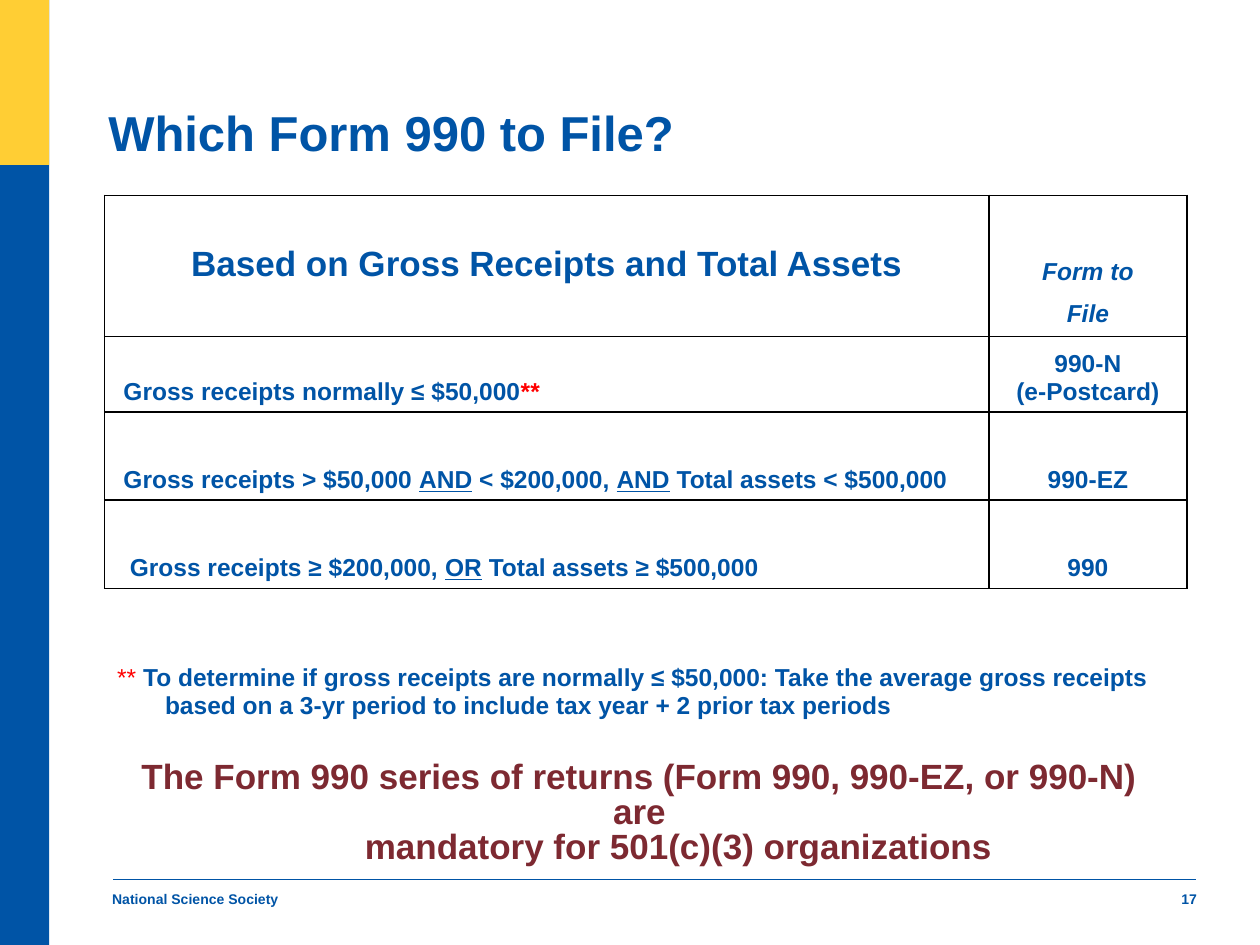
"""Build the slide that shows which Form 990 to file."""
from dataclasses import dataclass

from lxml import etree
from pptx import Presentation
from pptx import util as u
from pptx.dml.color import RGBColor
from pptx.enum import shapes, text
from pptx.oxml import ns

Inches, Pt = u.Inches, u.Pt
LEFT, CENTER, RIGHT = text.PP_ALIGN.LEFT, text.PP_ALIGN.CENTER, text.PP_ALIGN.RIGHT
TOP, MIDDLE, BOTTOM = text.MSO_ANCHOR.TOP, text.MSO_ANCHOR.MIDDLE, text.MSO_ANCHOR.BOTTOM


@dataclass(frozen=True)
class Theme:
    """Colours, font and type sizes of the slide."""
    blue: str = "0054A6"
    yellow: str = "FFCE34"
    red: str = "FF0000"
    maroon: str = "7D2931"
    black: str = "000000"
    font: str = "Arial"
    title: int = 28
    heading: int = 20
    body: int = 14
    footer: int = 8


THEME = Theme()
COLUMNS = [7.02, 1.57]
ROWS = [0.77, 0.35, 0.6, 0.35, 0.35, 0.35, 0.35, 1.09, 1.17]
LAST_RULED_ROW = 6
CLOSING_ROWS = {1, 2, 4, 6}
MERGES = [((5, 1), (6, 1)), ((7, 0), (7, 1)), ((8, 0), (8, 1))]
UNDERLINED = {"underline": True}
FORM = {"align": CENTER}
CRITERION = {"left": 0.15}

CELLS = {
    (0, 0): ([["Based on Gross Receipts and Total Assets"]],
             {"anchor": MIDDLE, "align": CENTER, "top": 0.38, "size": THEME.heading}),
    (0, 1): ([["Form to"]], {"align": CENTER, "italic": True}),
    (1, 1): ([["File"]], {"anchor": MIDDLE, "align": CENTER, "italic": True}),
    (2, 0): ([["Gross receipts normally ≤ $50,000", ("**", {"color": THEME.red})]], CRITERION),
    (2, 1): ([["990-N"], ["(e-Postcard)"]], FORM),
    (4, 0): ([["Gross receipts > $50,000 ", ("AND", UNDERLINED), " < $200,000, ",
               ("AND", UNDERLINED), " Total assets < $500,000"]], CRITERION),
    (4, 1): ([["990-EZ"]], FORM),
    (5, 1): ([["990"]], FORM),
    (6, 0): ([["Gross receipts ≥ $200,000, ", ("OR", UNDERLINED),
               " Total assets ≥ $500,000"]], {"left": 0.2}),
    (7, 0): ([[("** ", {"color": THEME.red, "bold": False}),
               "To determine if gross receipts are normally ≤ $50,000: Take the average "
               "gross receipts based on a 3-yr period to include tax year + 2 prior tax "
               "periods"]], {"hanging": 0.38}),
    (8, 0): ([["The Form 990 series of returns (Form 990, 990-EZ, or 990-N) are"],
              ["mandatory for 501(c)(3) organizations"]],
             {"align": CENTER, "size": THEME.heading, "color": THEME.maroon,
              "spacing": 0.9, "insets": [(0, 0.1), (0.52, 0)]}),
}


def assign(target, values):
    """Set each named attribute of the target."""
    for name, value in values.items():
        setattr(target, name, value)


def write(frame, paragraphs, align=LEFT, spacing=None, hanging=0, insets=None,
          color=THEME.blue, size=THEME.body, bold=True, italic=False):
    """Fill a text frame with paragraphs made of plain or specially formatted runs."""
    base = {"name": THEME.font, "size": Pt(size), "bold": bold, "italic": italic}
    for index, pieces in enumerate(paragraphs):
        paragraph = frame.add_paragraph() if index else frame.paragraphs[0]
        assign(paragraph, {"alignment": align, "line_spacing": spacing})
        before, after = insets[index] if insets else (hanging, 0)
        for name, value in (("marL", before), ("marR", after), ("indent", -hanging)):
            paragraph._p.get_or_add_pPr().set(name, str(Inches(value)))
        for piece in pieces:
            words, special = (piece, {}) if isinstance(piece, str) else piece
            run = paragraph.add_run()
            run.text = words
            values = {**base, **special}
            run.font.color.rgb = RGBColor.from_string(values.pop("color", color))
            assign(run.font, values)


def set_frame(frame, anchor):
    """Remove the margins of a text frame and wrap its text."""
    assign(frame, {"margin_left": 0, "margin_top": 0, "margin_right": 0,
                   "margin_bottom": 0, "word_wrap": True, "vertical_anchor": anchor})


def add_title(slide, words):
    """Place and format the title placeholder."""
    title = slide.shapes.title
    assign(title, {"left": Inches(0.86), "top": Inches(0.68),
                   "width": Inches(6.03), "height": Inches(0.61)})
    set_frame(title.text_frame, BOTTOM)
    write(title.text_frame, [[words]], size=THEME.title, spacing=0.9)


def add_band(slide, height, color):
    """Add a coloured band down from the top left corner."""
    band = slide.shapes.add_shape(shapes.MSO_SHAPE.RECTANGLE, 0, 0, Inches(0.39), Inches(height))
    band.shadow.inherit = False
    band.fill.solid()
    band.fill.fore_color.rgb = RGBColor.from_string(color)
    band.line.fill.background()


def add_footer_rule(slide):
    """Add the thin line above the footer."""
    rule = slide.shapes.add_connector(shapes.MSO_CONNECTOR.STRAIGHT, Inches(0.9), Inches(6.98),
                                      Inches(9.49), Inches(6.98))
    rule.line.color.rgb = RGBColor.from_string(THEME.blue)
    rule.line.width = Pt(0.75)
    etree.SubElement(rule._element.spPr, ns.qn("a:effectLst"))


def add_footer(slide, words, left, width, align):
    """Add one footer text."""
    footer = slide.shapes.add_textbox(Inches(left), Inches(7.07), Inches(width), Inches(0.31))
    set_frame(footer.text_frame, TOP)
    write(footer.text_frame, [[words]], align=align, size=THEME.footer)


def set_borders(cell, row):
    """Rule the sides of a cell that its row calls for and clear the others."""
    ruled = row <= LAST_RULED_ROW
    sides = {"L": ruled, "R": ruled, "T": row == 0 or row - 1 in CLOSING_ROWS,
             "B": row in CLOSING_ROWS}
    properties = cell._tc.get_or_add_tcPr()
    for index, (side, shown) in enumerate(sides.items()):
        border = etree.Element(ns.qn(f"a:ln{side}"), w=str(Pt(1)))
        fill = etree.SubElement(border, ns.qn("a:solidFill" if shown else "a:noFill"))
        if shown:
            etree.SubElement(fill, ns.qn("a:srgbClr"), val=THEME.black)
        properties.insert(index, border)


def fill_cell(cell, paragraphs, anchor=BOTTOM, left=0.1, top=0.05, **style):
    """Set the margins of a cell and write its text."""
    assign(cell, {"vertical_anchor": anchor, "margin_left": Inches(left),
                  "margin_top": Inches(top)})
    write(cell.text_frame, paragraphs, **style)


def add_filing_table(slide):
    """Add the table of filing criteria, forms and notes."""
    table = slide.shapes.add_table(len(ROWS), len(COLUMNS), Inches(0.83), Inches(1.55),
                                   Inches(sum(COLUMNS)), Inches(sum(ROWS))).table
    assign(table, {"first_row": False, "horz_banding": False})
    for column, width in zip(table.columns, COLUMNS):
        column.width = Inches(width)
    for row, height in enumerate(ROWS):
        table.rows[row].height = Inches(height)
        for column in range(len(COLUMNS)):
            cell = table.cell(row, column)
            cell.fill.background()
            set_borders(cell, row)
            if (row, column) in CELLS:
                paragraphs, style = CELLS[row, column]
                fill_cell(cell, paragraphs, **style)
            else:
                assign(cell, {"margin_top": 0, "margin_bottom": 0})
    for first, last in MERGES:
        table.cell(*first).merge(table.cell(*last))


def main():
    """Build and save the slide."""
    deck = Presentation()
    assign(deck, {"slide_width": Inches(10), "slide_height": Inches(7.5)})
    slide = deck.slides.add_slide(deck.slide_layouts[5])
    add_band(slide, 7.5, THEME.blue)
    add_band(slide, 1.31, THEME.yellow)
    add_footer_rule(slide)
    add_footer(slide, "National Science Society", 0.89, 3.17, LEFT)
    add_footer(slide, "17", 7.56, 1.94, RIGHT)
    add_title(slide, "Which Form 990 to File?")
    add_filing_table(slide)
    deck.save("out.pptx")


if __name__ == "__main__":
    main()
